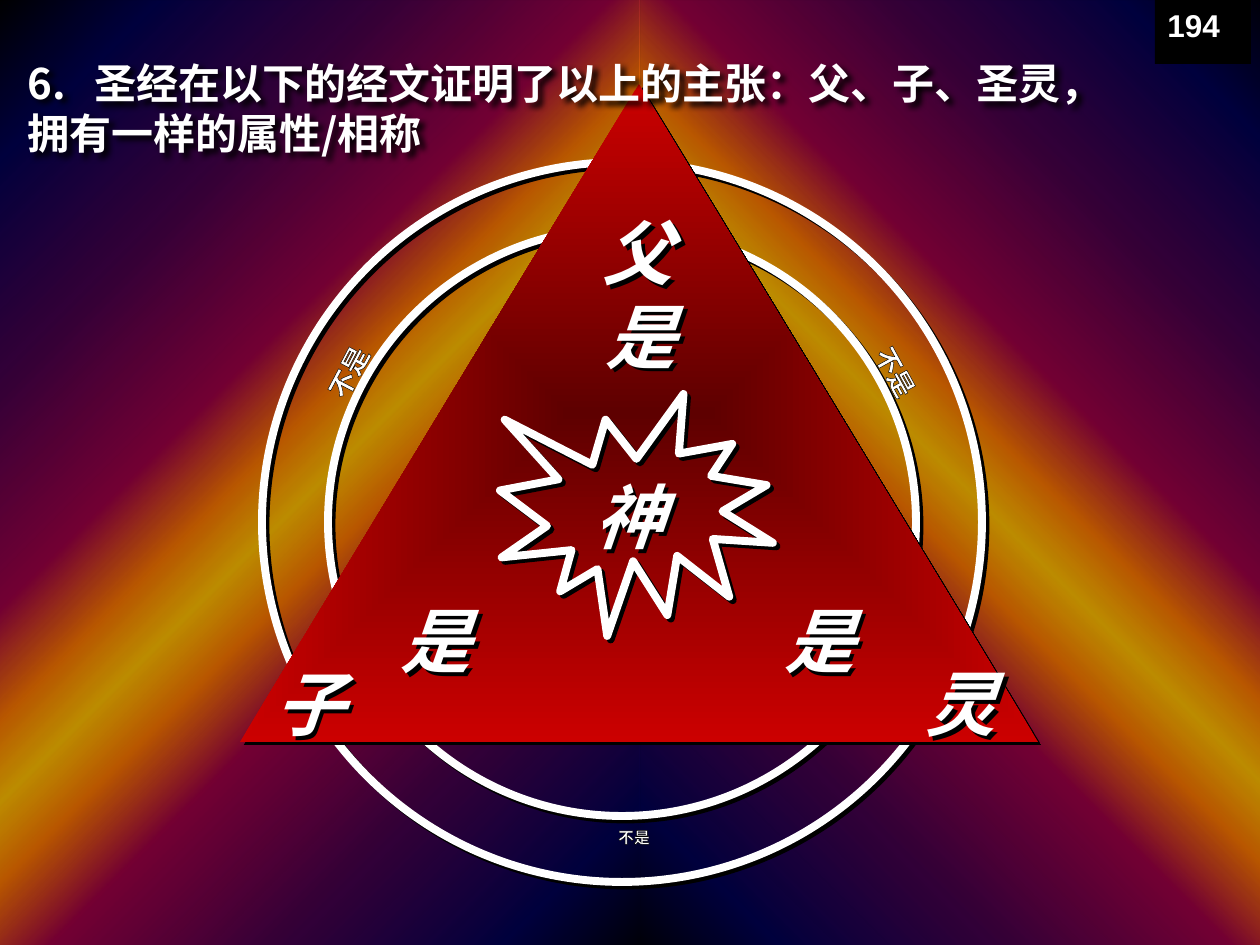
from dataclasses import dataclass

from lxml.etree import SubElement
from pptx import Presentation
from pptx.dml.color import RGBColor
from pptx.enum.shapes import MSO_SHAPE
from pptx.enum.text import MSO_ANCHOR, PP_ALIGN
from pptx.oxml.ns import qn
from pptx.util import Emu, Pt

PX = 914400 / 126


@dataclass(frozen=True)
class Theme:
    white: str = "FFFFFF"
    black: str = "000000"
    chinese: str = "Noto Sans CJK SC"
    latin: str = "Arial"
    letter_size: float = 40
    title_size: float = 24
    number_size: float = 18
    outline: float = 4.5
    # position, colour, opacity in percent
    rays: tuple = (
        (0, "000000", 100), (10, "000040", 95), (25, "400040", 86),
        (38, "8F0040", 80), (45, "F27300", 76), (50, "FFBF00", 73),
        (55, "F27300", 76), (62, "8F0040", 80), (75, "400040", 86),
        (90, "000040", 95), (100, "000000", 100))
    glow: tuple = ((0, "5E0000", 100), (100, "CC0000", 100))


THEME = Theme()


@dataclass(frozen=True)
class Box:
    left: int
    top: int
    width: int
    height: int

    def emu(self):
        return [px(n) for n in (self.left, self.top, self.width, self.height)]


@dataclass(frozen=True)
class Letter:
    text: str
    box: Box
    align: PP_ALIGN


@dataclass(frozen=True)
class RingLabel:
    box: Box
    rotation: float
    size: float


LETTERS = (
    Letter("是", Box(567, 281, 147, 97), PP_ALIGN.CENTER),
    Letter("是", Box(772, 586, 147, 97), PP_ALIGN.LEFT),
    Letter("是", Box(336, 586, 147, 97), PP_ALIGN.RIGHT),
    Letter("子", Box(262, 649, 252, 97), PP_ALIGN.LEFT),
    Letter("神", Box(535, 462, 189, 97), PP_ALIGN.CENTER),
    Letter("父", Box(512, 198, 252, 97), PP_ALIGN.CENTER),
    Letter("灵", Box(756, 649, 252, 97), PP_ALIGN.RIGHT),
)
RING_LABELS = (
    RingLabel(Box(275, 353, 147, 38), 297.8, 15.2),
    RingLabel(Box(822, 353, 147, 38), 61.1, 14.8),
    RingLabel(Box(557, 823, 154, 28), 0, 9),
)


def px(count: int) -> Emu:
    return Emu(round(count * PX))


def assign(target, values: dict) -> None:
    for name, value in values.items():
        setattr(target, name, value)


def add_colour(parent, colour: str, opacity: int = 100) -> None:
    node = SubElement(parent, qn("a:srgbClr"), val=colour)
    if opacity < 100:
        SubElement(node, qn("a:alpha"), val=str(opacity * 1000))


def add_shadow(shape, distance: float = 2.8, blur: float = 0) -> None:
    shape.shadow.inherit = False
    effects = shape.element.spPr.find(qn("a:effectLst"))
    shadow = SubElement(effects, qn("a:outerShdw"), blurRad=str(Pt(blur)),
                        dist=str(Pt(distance)), dir="2700000",
                        algn="ctr", rotWithShape="0")
    add_colour(shadow, THEME.black)


def fill_gradient(shape, stops: tuple, angle: int | None = None) -> None:
    """Fill along an angle, or outwards from the centre when there is none."""
    shape.fill.gradient()
    gradient = shape.element.spPr.find(qn("a:gradFill"))
    for child in list(gradient):
        gradient.remove(child)
    stop_list = SubElement(gradient, qn("a:gsLst"))
    for position, colour, opacity in stops:
        stop = SubElement(stop_list, qn("a:gs"), pos=str(position * 1000))
        add_colour(stop, colour, opacity)
    if angle is None:
        centre = SubElement(gradient, qn("a:path"), path="shape")
        SubElement(centre, qn("a:fillToRect"),
                   {side: "50000" for side in "ltrb"})
    else:
        SubElement(gradient, qn("a:lin"), ang=str(angle * 60000), scaled="0")


def add_shape(slide, kind: MSO_SHAPE, box: Box):
    shape = slide.shapes.add_shape(kind, *box.emu())
    shape.shadow.inherit = False
    shape.line.fill.background()
    return shape


def add_outline(slide, kind: MSO_SHAPE, box: Box) -> None:
    shape = add_shape(slide, kind, box)
    shape.fill.background()
    shape.line.color.rgb = RGBColor.from_string(THEME.white)
    shape.line.width = Pt(THEME.outline)
    add_shadow(shape)


def write(shape, text: str, size: float, font: str = THEME.chinese,
          align: PP_ALIGN = PP_ALIGN.LEFT, italic: bool = False):
    para = shape.text_frame.paragraphs[0]
    para.text = text
    para.alignment = align
    for span in para.runs:
        assign(span.font, {"name": font, "size": Pt(size),
                           "bold": True, "italic": italic})
        span.font.color.rgb = RGBColor.from_string(THEME.white)
        SubElement(span.font._element, qn("a:ea"), typeface=font)
    return para


def add_letter(slide, letter: Letter) -> None:
    shape = slide.shapes.add_textbox(*letter.box.emu())
    assign(shape.text_frame, {"word_wrap": True, "margin_top": px(12),
                              "margin_bottom": 0})
    para = write(shape, letter.text, THEME.letter_size,
                 align=letter.align, italic=True)
    para.line_spacing = Pt(48)
    add_shadow(shape)


def add_ring_label(slide, label: RingLabel) -> None:
    shape = slide.shapes.add_textbox(*label.box.emu())
    shape.rotation = label.rotation
    assign(shape.text_frame, {"word_wrap": False, "margin_top": 0,
                              "margin_bottom": 0,
                              "vertical_anchor": MSO_ANCHOR.MIDDLE})
    para = write(shape, "不是", label.size, align=PP_ALIGN.CENTER)
    properties = para.runs[0].font._element
    line = SubElement(properties, qn("a:ln"), w=str(Pt(0.75)))
    add_colour(SubElement(line, qn("a:solidFill")), THEME.black)
    properties.insert(0, line)


def place_title(slide) -> None:
    title = slide.shapes.title
    assign(title, dict(zip(("left", "top", "width", "height"),
                           Box(15, -24, 1239, 256).emu())))
    assign(title.text_frame, {"word_wrap": True, "margin_top": px(14),
                              "vertical_anchor": MSO_ANCHOR.MIDDLE})
    para = write(title, "6.\t圣经在以下的经文证明了以上的主张：父、子、圣灵，\v"
                 "拥有一样的属性/相称", THEME.title_size)
    para.line_spacing = Pt(28.5)
    tabs = SubElement(para._p.get_or_add_pPr(), qn("a:tabLst"))
    SubElement(tabs, qn("a:tab"), pos=str(px(67)), algn="l")
    add_shadow(title, blur=3)
    slide.shapes.element.append(title.element)


def add_page_number(slide) -> None:
    shape = add_shape(slide, MSO_SHAPE.RECTANGLE, Box(1155, 0, 96, 64))
    shape.fill.solid()
    shape.fill.fore_color.rgb = RGBColor.from_string(THEME.black)
    assign(shape.text_frame, {"word_wrap": False,
                              "vertical_anchor": MSO_ANCHOR.TOP})
    write(shape, "194", THEME.number_size, THEME.latin)


def main() -> None:
    deck = Presentation()
    assign(deck, {"slide_width": px(1260), "slide_height": px(945)})
    slide = deck.slides.add_slide(deck.slide_layouts[5])
    slide.background.fill.solid()
    slide.background.fill.fore_color.rgb = RGBColor.from_string(THEME.black)

    for left, angle in ((640, 315), (-4, 45)):
        half = add_shape(slide, MSO_SHAPE.RECTANGLE, Box(left, 0, 644, 969))
        fill_gradient(half, THEME.rays, angle)
    for inset in (0, 66):
        side = 720 - 2 * inset
        add_outline(slide, MSO_SHAPE.OVAL,
                    Box(262 + inset, 162 + inset, side, side))
    triangle = add_shape(slide, MSO_SHAPE.ISOSCELES_TRIANGLE,
                         Box(240, 84, 798, 658))
    fill_gradient(triangle, THEME.glow)
    add_shadow(triangle)
    add_outline(slide, MSO_SHAPE.EXPLOSION1, Box(500, 394, 273, 242))
    for letter in LETTERS:
        add_letter(slide, letter)
    for label in RING_LABELS:
        add_ring_label(slide, label)
    place_title(slide)
    add_page_number(slide)
    deck.save("out.pptx")


if __name__ == "__main__":
    main()
